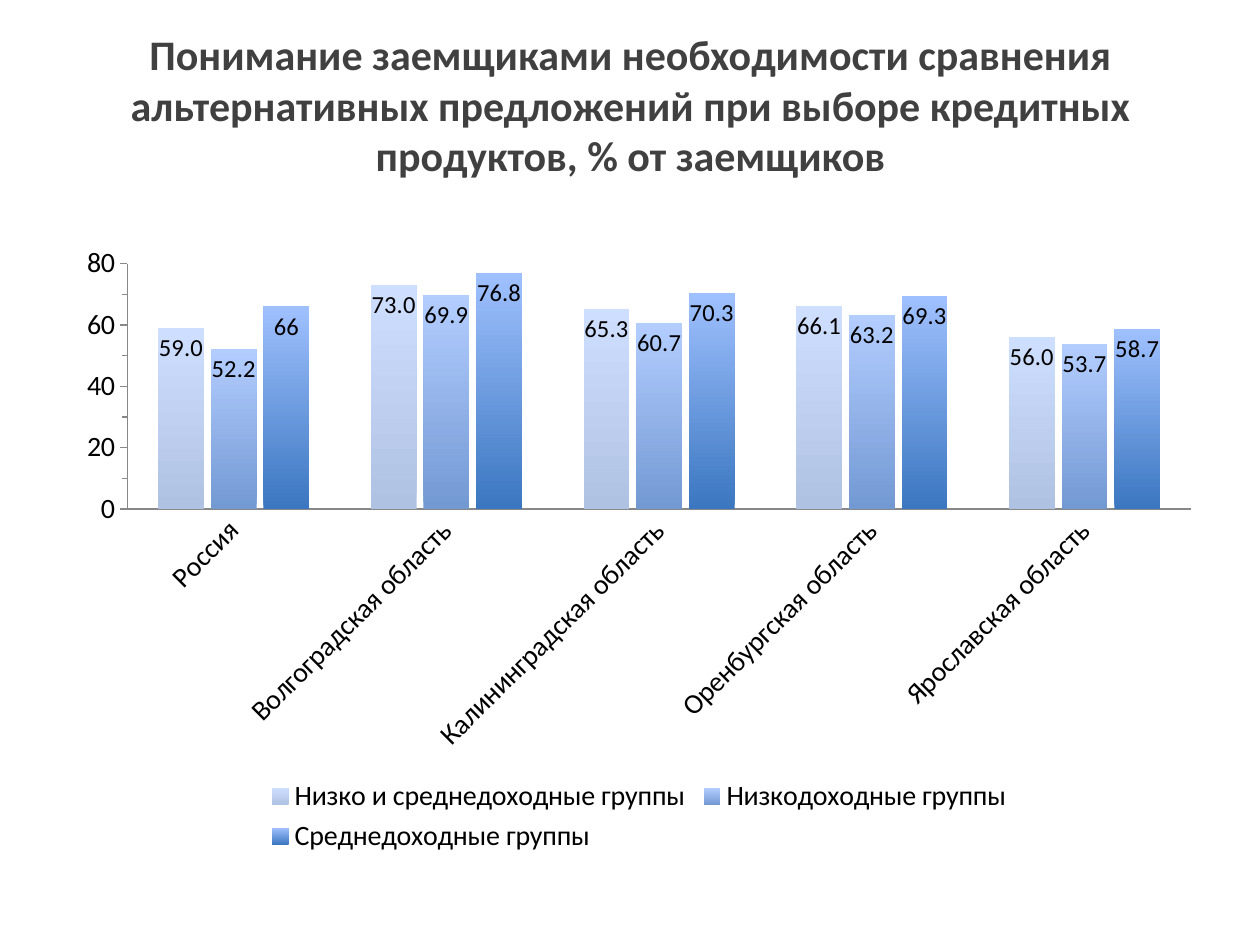
from pptx import Presentation
from pptx import util as u
from pptx.chart.data import CategoryChartData
from pptx.dml.color import RGBColor
from pptx.enum import chart as c, text

TITLE = ("Понимание заемщиками необходимости сравнения альтернативных "
         "предложений при выборе кредитных продуктов, % от заемщиков")
REGIONS = ["Россия", "Волгоградская область", "Калининградская область",
           "Оренбургская область", "Ярославская область"]
GROUPS = [
    {"name": "Низко и среднедоходные группы", "values": [59, 73, 65.3, 66.1, 56],
     "gradient": ("B0C2E2", "CEDEFF"), "format": "0.0"},
    {"name": "Низкодоходные группы", "values": [52.2, 69.9, 60.7, 63.2, 53.7],
     "gradient": ("7399D3", "B3CDFF"), "format": "General"},
    {"name": "Среднедоходные группы", "values": [66, 76.8, 70.3, 69.3, 58.7],
     "gradient": ("3B77C0", "9FC0FE"), "format": "General"},
]
THEME = {"font": "Calibri", "title": "404040", "text": "000000", "axis": "888888",
         "title_size": 24, "axis_size": 16, "label_size": 14}
PX = u.Inches(1) // 126
SLIDE_BOX = (1260, 945)
TITLE_BOX = (25, 6, 1211, 197)
CHART_BOX = (64, 234, 1150, 625)


def apply(target, values):
    for name, value in values.items():
        setattr(target, name, value)


def scale(box):
    return [length * PX for length in box]


def style_font(font, size, color="text", bold=False):
    apply(font, {"name": THEME["font"], "size": u.Pt(THEME[size]), "bold": bold})
    font.color.rgb = RGBColor.from_string(THEME[color])


def add_title(slide):
    title = slide.shapes.title
    apply(title, dict(zip(("left", "top", "width", "height"), scale(TITLE_BOX))))
    frame = title.text_frame
    apply(frame, {"text": TITLE, "word_wrap": True,
                  "vertical_anchor": text.MSO_ANCHOR.MIDDLE,
                  "auto_size": text.MSO_AUTO_SIZE.NONE})
    paragraph = frame.paragraphs[0]
    paragraph.alignment = text.PP_ALIGN.CENTER
    style_font(paragraph.runs[0].font, "title_size", "title", True)


def style_axis(axis, values):
    apply(axis, values)
    style_font(axis.tick_labels.font, "axis_size")
    axis.format.line.color.rgb = RGBColor.from_string(THEME["axis"])
    axis.format.line.width = u.Pt(0.75)


def style_series(series, group):
    fill = series.format.fill
    fill.gradient()
    fill.gradient_angle = 90
    for stop, position, color in zip(fill.gradient_stops, (0, 1), group["gradient"]):
        stop.position = position
        stop.color.rgb = RGBColor.from_string(color)
    labels = series.data_labels
    apply(labels, {"show_value": True, "position": c.XL_LABEL_POSITION.INSIDE_END,
                   "number_format": group["format"], "number_format_is_linked": False})
    style_font(labels.font, "label_size")


def add_chart(slide):
    data = CategoryChartData()
    data.categories = REGIONS
    for group in GROUPS:
        data.add_series(group["name"], group["values"])
    chart = slide.shapes.add_chart(
        c.XL_CHART_TYPE.COLUMN_CLUSTERED, *scale(CHART_BOX), data).chart
    apply(chart, {"has_title": False, "has_legend": True})
    style_font(chart.font, "axis_size")
    apply(chart.legend, {"position": c.XL_LEGEND_POSITION.BOTTOM, "include_in_layout": False})
    style_font(chart.legend.font, "axis_size")

    tick = c.XL_TICK_MARK
    style_axis(chart.category_axis, {"major_tick_mark": tick.NONE, "minor_tick_mark": tick.NONE})
    chart.category_axis._element.txPr.bodyPr.set("rot", str(-45 * 60000))
    style_axis(chart.value_axis, {
        "minimum_scale": 0, "maximum_scale": 80, "major_unit": 20, "minor_unit": 10,
        "major_tick_mark": tick.OUTSIDE, "minor_tick_mark": tick.OUTSIDE,
        "has_major_gridlines": False})
    apply(chart.value_axis.tick_labels, {"number_format": "0", "number_format_is_linked": False})

    plot = chart.plots[0]
    apply(plot, {"gap_width": 134, "overlap": -15, "vary_by_categories": False})
    for series, group in zip(plot.series, GROUPS):
        style_series(series, group)


def main():
    presentation = Presentation()
    apply(presentation, dict(zip(("slide_width", "slide_height"), scale(SLIDE_BOX))))
    slide = presentation.slides.add_slide(presentation.slide_layouts[5])
    add_title(slide)
    add_chart(slide)
    presentation.save("out.pptx")


if __name__ == "__main__":
    main()
